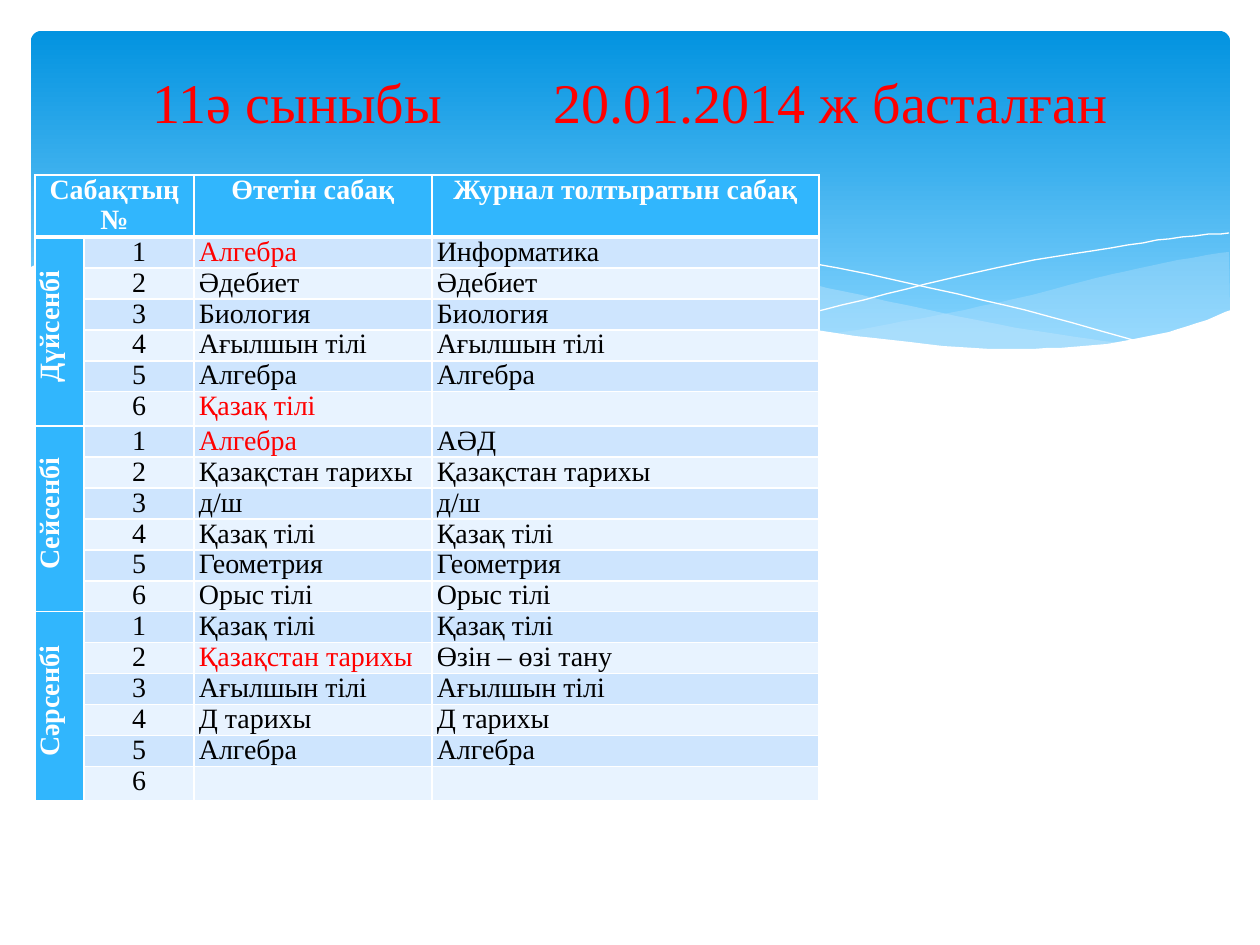
from lxml.etree import SubElement
from pptx import Presentation
from pptx.dml.color import RGBColor
from pptx.enum.shapes import MSO_SHAPE as Preset
from pptx.enum.text import MSO_ANCHOR as Anchor, PP_ALIGN as Align
from pptx.oxml import parse_xml
from pptx.oxml.ns import nsdecls, qn
from pptx.util import Pt

SCALE = 914400 / 126  # EMU in one px
FONT = "Times New Roman"

WHITE = RGBColor(0xFF, 0xFF, 0xFF)
BLACK = RGBColor(0x00, 0x00, 0x00)
RED = RGBColor(0xFF, 0x00, 0x00)
SKY_TOP = RGBColor(0x02, 0x93, 0xE0)
SKY_BOTTOM = RGBColor(0x83, 0xD3, 0xFE)
WAVE = RGBColor(0xC6, 0xE7, 0xFC)
HEADER = RGBColor(0x31, 0xB6, 0xFD)
BANDS = (RGBColor(0xCE, 0xE5, 0xFE), RGBColor(0xE8, 0xF3, 0xFF))

# Wave outlines in px
RIGHT_WAVE = (
    [(1229, 252), (1178, 260), (1123, 272), (1085, 281), (1014, 299),
     (949, 313), (890, 324), (833, 334)],
    [(833, 334), (888, 341), (939, 347), (984, 349), (1026, 350), (1076, 348),
     (1120, 343), (1160, 334), (1196, 324), (1230, 311)],
)
MIDDLE_WAVE = (
    [(1125, 344), (1091, 339), (1017, 328), (934, 311), (842, 291), (793, 280),
     (717, 262), (648, 249), (586, 241), (529, 235), (455, 233), (394, 237),
     (360, 241)],
    [(360, 241), (431, 251), (509, 266), (566, 280), (619, 292), (713, 312),
     (799, 329), (874, 340), (943, 347), (1003, 350), (1056, 350),
     (1104, 347), (1125, 344)],
)
FALLING_LINE = [(389, 246), (422, 241), (457, 238), (505, 236), (567, 237),
                (643, 242), (733, 252), (838, 268), (958, 294), (1047, 316),
                (1143, 343)]
RISING_LINE = [(772, 324), (823, 310), (907, 289), (978, 272), (1053, 257),
               (1128, 245), (1182, 237), (1229, 233)]
WHITE_EDGE = [(1231, 310), (1197, 323), (1159, 334), (1118, 342), (1071, 347),
              (1019, 349), (959, 347), (892, 340), (816, 330), (730, 315),
              (633, 294), (563, 277), (493, 260), (428, 248), (368, 241),
              (315, 234), (266, 232), (223, 232), (184, 233), (150, 235),
              (120, 241), (96, 246), (74, 251), (50, 258), (29, 268)]
WHITE_BASE = [(29, 415), (1231, 415)]

# Timetable: lesson held, lesson entered in the journal, lesson replaced
COLUMNS = (49, 110, 238, 387)
ROW_HEIGHT = 31
HEADINGS = {0: "Сабақтың №", 2: "Өтетін сабақ", 3: "Журнал толтыратын сабақ"}
DAYS = {
    "Дүйсенбі": [
        ("Алгебра", "Информатика", True), ("Әдебиет", "Әдебиет", False),
        ("Биология", "Биология", False),
        ("Ағылшын тілі", "Ағылшын тілі", False),
        ("Алгебра", "Алгебра", False), ("Қазақ тілі", "", True)],
    "Сейсенбі": [
        ("Алгебра", "АӘД", True),
        ("Қазақстан тарихы", "Қазақстан тарихы", False),
        ("д/ш", "д/ш", False), ("Қазақ тілі", "Қазақ тілі", False),
        ("Геометрия", "Геометрия", False), ("Орыс тілі", "Орыс тілі", False)],
    "Сәрсенбі": [
        ("Қазақ тілі", "Қазақ тілі", False),
        ("Қазақстан тарихы", "Өзін – өзі тану", True),
        ("Ағылшын тілі", "Ағылшын тілі", False),
        ("Д тарихы", "Д тарихы", False), ("Алгебра", "Алгебра", False),
        ("", "", False)],
}


def px(value):
    return round(value * SCALE)


def smooth(knots, steps=4):
    """Points of a Catmull-Rom curve through the knots."""
    padded = [knots[0], *knots, knots[-1]]
    points = [knots[0]]
    for a, b, c, d in zip(padded, padded[1:], padded[2:], padded[3:]):
        for step in range(1, steps + 1):
            t = step / steps
            points.append(tuple(
                (2 * q + (r - p) * t + (2 * p - 5 * q + 4 * r - s) * t ** 2
                 + (3 * q - p - 3 * r + s) * t ** 3) / 2
                for p, q, r, s in zip(a, b, c, d)))
    return points


def set_values(target, values):
    for name, value in values.items():
        setattr(target, name, value)


class SlideBuilder:
    def __init__(self, slide, font_name):
        self.slide = slide
        self.font_name = font_name

    def add_text(self, paragraph, text, size, color, bold=False):
        run = paragraph.add_run()
        run.text = text
        set_values(run.font, {"name": self.font_name, "size": Pt(size), "bold": bold})
        run.font.color.rgb = color

    def panel(self, left, top, width, height):
        shape = self.slide.shapes.add_shape(
            Preset.ROUNDED_RECTANGLE, px(left), px(top), px(width), px(height))
        shape.adjustments[0] = 0.03
        shape.shadow.inherit = False
        shape.line.fill.background()
        shape.fill.gradient()
        shape.fill.gradient_angle = 270
        stops = ((0, SKY_TOP), (0.9, SKY_BOTTOM))
        for stop, (position, color) in zip(shape.fill.gradient_stops, stops):
            stop.position = position
            stop.color.rgb = color

    def outline(self, points, fill=None, opacity=100):
        builder = self.slide.shapes.build_freeform(*points[0], scale=SCALE)
        builder.add_line_segments(points[1:], close=fill is not None)
        shape = builder.convert_to_shape()
        shape.shadow.inherit = False
        if fill is None:
            shape.fill.background()
            shape.line.color.rgb = WHITE
            shape.line.width = 0
            return
        shape.line.fill.background()
        shape.fill.solid()
        shape.fill.fore_color.rgb = fill
        if opacity < 100:
            color = shape._element.spPr.find(".//" + qn("a:srgbClr"))
            SubElement(color, qn("a:alpha"), val=str(opacity * 1000))

    def title(self, parts, left, top, width, height, tab):
        box = self.slide.shapes.add_textbox(px(left), px(top), px(width), px(height))
        set_values(box.text_frame, {
            "word_wrap": True, "vertical_anchor": Anchor.MIDDLE,
            "margin_left": px(90), "margin_right": 0})
        paragraph = box.text_frame.paragraphs[0]
        tabs = SubElement(paragraph._p.get_or_add_pPr(), qn("a:tabLst"))
        SubElement(tabs, qn("a:tab"), pos=str(px(tab)), algn="l")
        self.add_text(paragraph, "\t".join(parts), 32, RED)

    def cell(self, cell, text, fill, color=BLACK, bold=False, align=Align.LEFT,
             bottom=1, vertical=False):
        set_values(cell, {"margin_left": px(5), "margin_right": px(5),
                          "margin_top": 0, "margin_bottom": 0})
        cell.fill.solid()
        cell.fill.fore_color.rgb = fill
        properties = cell._tc.get_or_add_tcPr()
        for index, (side, width) in enumerate(zip("LRTB", (1, 1, 1, bottom))):
            properties.insert(index, parse_xml(
                f'<a:ln{side} {nsdecls("a")} w="{Pt(width)}"><a:solidFill>'
                f'<a:srgbClr val="{WHITE}"/></a:solidFill></a:ln{side}>'))
        paragraph = cell.text_frame.paragraphs[0]
        set_values(paragraph, {"alignment": align, "line_spacing": 0.97})
        if vertical:
            properties.set("vert", "vert270")
            paragraph._p.get_or_add_pPr().set("marL", str(px(10)))
        if text:
            self.add_text(paragraph, text, 16, color, bold)
        else:
            SubElement(paragraph._p, qn("a:endParaRPr"), sz="1600")

    def timetable(self, left, top):
        lessons = [(day, number, *lesson) for day, rows in DAYS.items()
                   for number, lesson in enumerate(rows, 1)]
        heights = [2 * ROW_HEIGHT] + [ROW_HEIGHT] * len(lessons)
        table = self.slide.shapes.add_table(
            len(heights), len(COLUMNS), px(left), px(top),
            px(sum(COLUMNS)), px(sum(heights))).table
        for column, width in zip(table.columns, COLUMNS):
            column.width = px(width)
        for row, height in zip(table.rows, heights):
            row.height = px(height)
        heading = {"fill": HEADER, "color": WHITE, "bold": True, "align": Align.CENTER}
        for column in range(len(COLUMNS)):
            self.cell(table.cell(0, column), HEADINGS.get(column, ""), bottom=3, **heading)
        table.cell(0, 0).merge(table.cell(0, 1))
        for row, (day, number, held, entered, replaced) in enumerate(lessons, 1):
            band = BANDS[(row - 1) % 2]
            self.cell(table.cell(row, 0), day if number == 1 else "", vertical=True, **heading)
            self.cell(table.cell(row, 1), str(number), band, align=Align.CENTER)
            self.cell(table.cell(row, 2), held, band, RED if replaced else BLACK)
            self.cell(table.cell(row, 3), entered, band)
            if number == len(DAYS[day]):
                table.cell(row - number + 1, 0).merge(table.cell(row, 0))


def main():
    presentation = Presentation()
    presentation.slide_width, presentation.slide_height = px(1260), px(945)
    slide = presentation.slides.add_slide(presentation.slide_layouts[6])
    builder = SlideBuilder(slide, FONT)

    # Sky panel with waves
    builder.panel(31, 31, 1199, 340)
    for edges, opacity in ((RIGHT_WAVE, 29), (MIDDLE_WAVE, 40)):
        points = [point for edge in edges for point in smooth(edge)]
        builder.outline(points, WAVE, opacity)
    for line in (FALLING_LINE, RISING_LINE):
        builder.outline(smooth(line))
    builder.outline(smooth(WHITE_EDGE) + WHITE_BASE, WHITE)

    # Timetable and title
    builder.timetable(35, 175)
    builder.title(("11ә сыныбы", "20.01.2014 ж басталған"), 63, 47, 1134, 109, tab=401)

    presentation.save("out.pptx")


if __name__ == "__main__":
    main()
